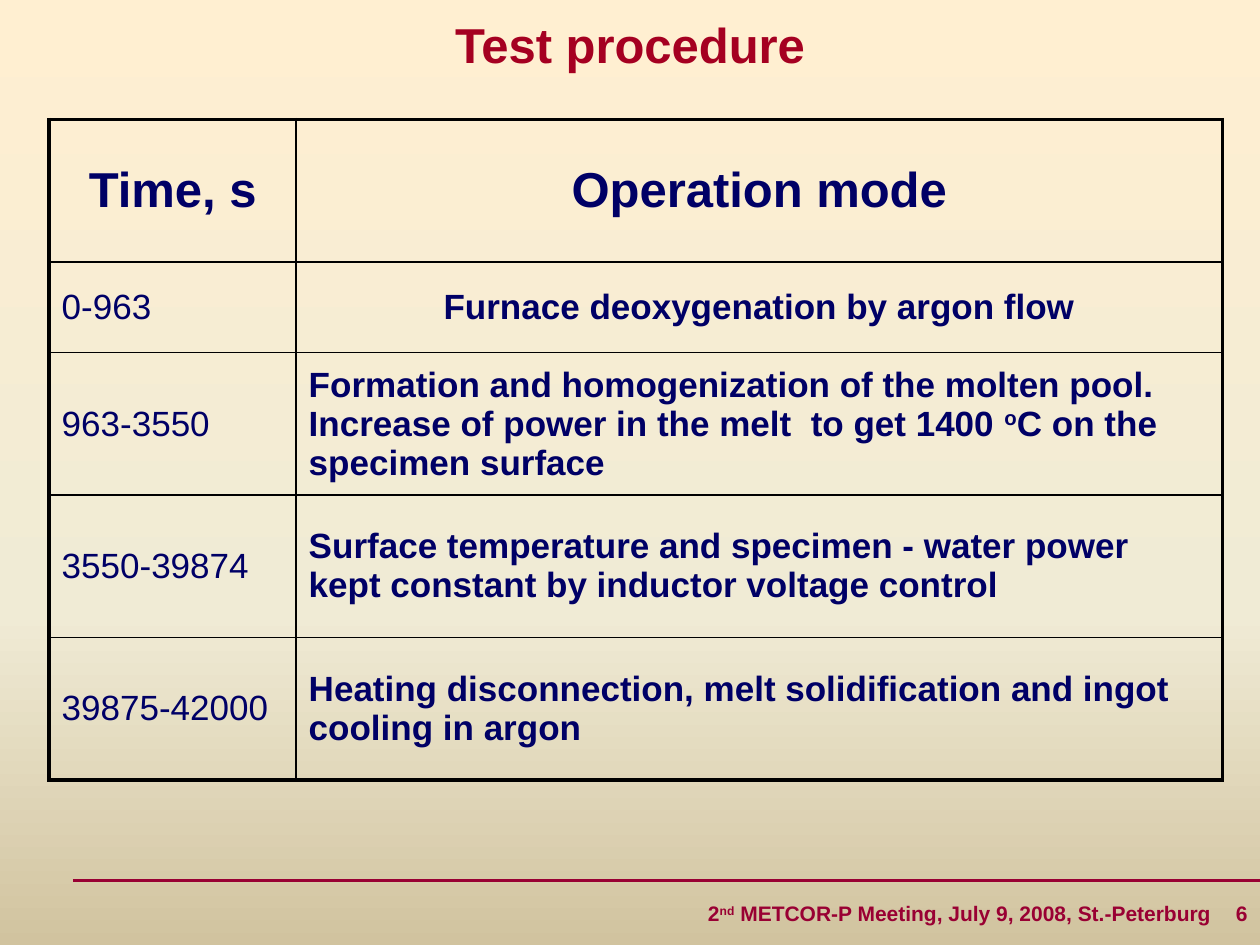
from lxml import etree
from pptx import Presentation
from pptx.dml.color import RGBColor
from pptx.enum.shapes import MSO_CONNECTOR
from pptx.enum.text import MSO_ANCHOR, PP_ALIGN
from pptx.oxml import parse_xml
from pptx.oxml.ns import nsdecls, qn
from pptx.util import Cm, Pt

LEFT, MID, RIGHT = PP_ALIGN.LEFT, PP_ALIGN.CENTER, PP_ALIGN.RIGHT
MIDDLE = MSO_ANCHOR.MIDDLE
STRAIGHT = MSO_CONNECTOR.STRAIGHT

FONT = "Arial"
NAVY, RED, WINE, BLACK = "000066", "A50021", "990033", "000000"
THIN, THICK = 1, 2.25


def color(code):
    return RGBColor.from_string(code)


class Deck:
    def __init__(self):
        self.prs = Presentation()
        self.prs.slide_width, self.prs.slide_height = Cm(25.4), Cm(19.05)
        self.slide = self.prs.slides.add_slide(self.prs.slide_layouts[6])
        self.shapes = self.slide.shapes

    def backdrop(self, stops):
        fill = self.slide.background.fill
        fill.gradient()
        fill.gradient_angle = 270
        marks = "".join(
            f'<a:gs pos="{pos * 1000}"><a:srgbClr val="{code}"/></a:gs>'
            for pos, code in stops)
        old = fill._xPr.find(".//" + qn("a:gsLst"))
        new = parse_xml(f'<a:gsLst {nsdecls("a")}>{marks}</a:gsLst>')
        old.getparent().replace(old, new)

    def words(self, frame, text, size, code, bold=True, align=LEFT):
        """Text between two ^ marks is raised."""
        frame.word_wrap = True
        par = frame.paragraphs[0]
        par.alignment = align
        for num, part in enumerate(text.split("^")):
            run = par.add_run()
            run.text = part
            font = run.font
            font.name, font.size, font.bold = FONT, Pt(size), bold
            font.color.rgb = color(code)
            if num % 2:
                font._element.set("baseline", "30000")

    def label(self, text, left, top, width, height, size, code, align):
        box = self.shapes.add_textbox(Cm(left), Cm(top), Cm(width), Cm(height))
        box.text_frame.vertical_anchor = MIDDLE
        self.words(box.text_frame, text, size, code, align=align)

    def rule(self, left, right, top, code, width):
        line = self.shapes.add_connector(
            STRAIGHT, Cm(left), Cm(top), Cm(right), Cm(top))
        line.line.color.rgb = color(code)
        line.line.width = Pt(width)
        etree.SubElement(line._element.spPr, qn("a:effectLst"))

    def border(self, cell, side, width):
        cell._tc.get_or_add_tcPr().append(parse_xml(
            f'<a:ln{side} {nsdecls("a")} w="{Pt(width)}"><a:solidFill>'
            f'<a:srgbClr val="{BLACK}"/></a:solidFill></a:ln{side}>'))

    def table(self, rows, left, top, wide, tall):
        grid = self.shapes.add_table(
            len(rows), len(wide), Cm(left), Cm(top),
            Cm(sum(wide)), Cm(sum(tall))).table
        grid.first_row = grid.horz_banding = False
        for col, width in zip(grid.columns, wide):
            col.width = Cm(width)
        for row, height in zip(grid.rows, tall):
            row.height = Cm(height)
        for y, row in enumerate(rows):
            for x, (text, size, bold, align) in enumerate(row):
                cell = grid.cell(y, x)
                cell.vertical_anchor = MIDDLE
                self.words(cell.text_frame, text, size, NAVY, bold, align)
                edges = {"L": x == 0, "R": x == len(wide) - 1,
                         "T": y == 0, "B": y == len(rows) - 1}
                for side, outer in edges.items():
                    self.border(cell, side, THICK if outer else THIN)
                cell.fill.background()


def main():
    deck = Deck()
    deck.backdrop([(0, "FFEFD1"), (65, "F0EBD5"), (100, "D1C39F")])

    # Footer
    deck.rule(1.47, 25.4, 17.75, WINE, THICK)
    deck.label("2^nd^ METCOR-P Meeting, July 9, 2008, St.-Peterburg",
               11.9, 17.78, 12.77, 1.27, 12, WINE, RIGHT)
    deck.label("6", 24.4, 17.78, 1, 1.27, 12, WINE, RIGHT)

    # Title
    deck.label("Test procedure", 0, 0, 25.4, 1.78, 28, RED, MID)

    # Test stages
    stages = [
        ("0-963", "Furnace deoxygenation by argon flow", MID),
        ("963-3550", "Formation and homogenization of the molten pool. "
         "Increase of power in the melt  to get 1400 ^o^C on the "
         "specimen surface", LEFT),
        ("3550-39874", "Surface temperature and specimen - water power "
         "kept constant by inductor voltage control", LEFT),
        ("39875-42000", "Heating disconnection, melt solidification and "
         "ingot cooling in argon", LEFT),
    ]
    head = [(name, 28, True, MID) for name in ("Time, s", "Operation mode")]
    body = [[(time, 20, False, LEFT), (mode, 20, True, align)]
            for time, mode, align in stages]
    deck.table([head] + body, 0.99, 2.41, [4.98, 18.67],
               [2.87, 1.83, 2.87, 2.87, 2.87])

    deck.prs.save("out.pptx")


if __name__ == "__main__":
    main()
